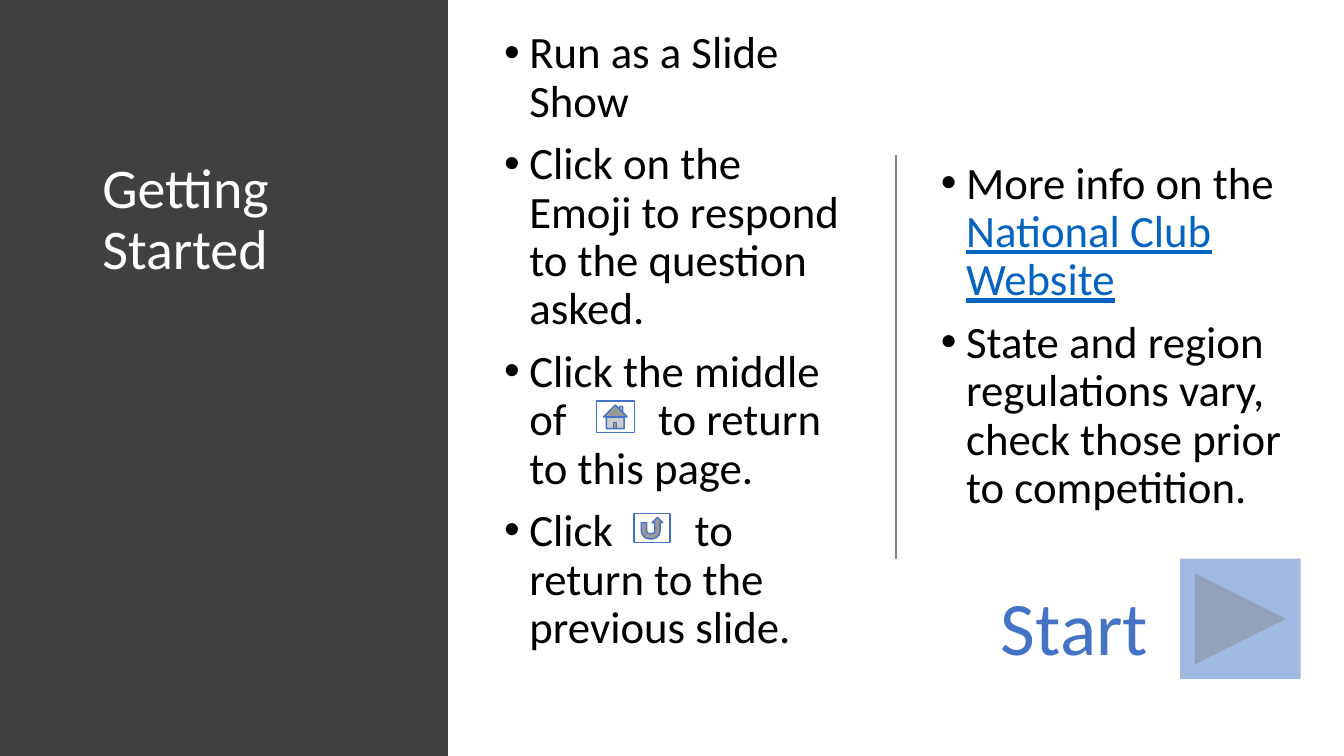
from lxml import etree
from pptx import Presentation
from pptx.dml.color import RGBColor
from pptx.enum.shapes import MSO_CONNECTOR, MSO_SHAPE
from pptx.enum.text import MSO_AUTO_SIZE, PP_ALIGN
from pptx.oxml.ns import qn
from pptx.util import Pt

RECT = MSO_SHAPE.RECTANGLE
HOME = MSO_SHAPE.ACTION_BUTTON_HOME
BACK = MSO_SHAPE.ACTION_BUTTON_RETURN
NEXT = MSO_SHAPE.ACTION_BUTTON_FORWARD_OR_NEXT
LINE = MSO_CONNECTOR.STRAIGHT
LEFT, MID = PP_ALIGN.LEFT, PP_ALIGN.CENTER
GROW = MSO_AUTO_SIZE.SHAPE_TO_FIT_TEXT
FONT = "Calibri"
HUES = {"panel": "404040", "white": "FFFFFF", "black": "000000",
        "rule": "808080", "blue": "4472C4", "link": "0563C1"}


def hue(name):
    """Return the named colour."""
    return RGBColor.from_string(HUES[name])


def add_text(slide, box, paras, size=32, color="black", align=LEFT,
             lead=0.9, bullet=False, wrap=True):
    """Add a text box; each paragraph lists runs of (text, color, line, gap)."""
    frame = slide.shapes.add_textbox(*map(Pt, box)).text_frame
    frame.word_wrap = wrap
    if not wrap:
        frame.auto_size = GROW
    for i, runs in enumerate(paras):
        para = frame.add_paragraph() if i else frame.paragraphs[0]
        para.alignment, para.line_spacing = align, lead
        para.space_before = Pt(10 if i else 0)
        if bullet:
            props = para._p.get_or_add_pPr()
            props.set("marL", str(Pt(18)))
            props.set("indent", str(-Pt(18)))
            etree.SubElement(props, qn("a:buFont")).set("typeface", "Arial")
            etree.SubElement(props, qn("a:buChar")).set("char", "•")
        for text, tint, line, gap in runs:
            run = para.add_run()
            run.text = text
            font = run.font
            font.name, font.size, font.underline = FONT, Pt(size), line
            font.color.rgb = hue(tint or color)
            if gap:
                run._r.get_or_add_rPr().set("spc", str(gap * 100))


def plain(text):
    """Return a run in the default format."""
    return text, None, False, 0


def space(gap):
    """Return one space widened by the gap."""
    return " ", None, False, gap


def add_form(slide, kind, box, fill, edge=None, alpha=None):
    """Add a filled preset shape."""
    form = slide.shapes.add_shape(kind, *map(Pt, box))
    form.shadow.inherit = False
    form.fill.solid()
    form.fill.fore_color.rgb = hue(fill)
    if edge:
        form.line.color.rgb = hue(edge)
        form.line.width = Pt(1)
    else:
        form.line.fill.background()
    if alpha:
        tint = form._element.spPr.find(f".//{qn('a:srgbClr')}")
        etree.SubElement(tint, qn("a:alpha")).set("val", str(alpha * 1000))


def add_title(slide, x, y, w, h):
    """Draw the dark panel and its title."""
    add_form(slide, RECT, (x, y, w, h), "panel")
    add_text(slide, (x + 66, y + 111, w - 92, 343),
             [[plain("Getting Started")]], size=40, color="white")


def add_steps(slide, x, y, w, h):
    """Draw the list of steps with its two small buttons."""
    add_text(slide, (x, y, w, h), [
        [plain("Run as a Slide Show")],
        [plain("Click on the Emoji to respond to the question asked.")],
        [plain("Click the middle of"), space(58), plain("to return to this page.")],
        [plain("Click"), space(51), plain("to return to the previous slide.")],
    ], bullet=True)
    add_form(slide, HOME, (x + 73, y + 268.5, 27, 22.5), "white", "blue")
    add_form(slide, BACK, (x + 100, y + 349, 25.5, 20.5), "white", "blue")


def add_more(slide, x, y, w, h):
    """Draw the divider and the notes to its right."""
    rule = slide.shapes.add_connector(LINE, *map(Pt, (x, y, x, y + 288)))
    rule.line.color.rgb = hue("rule")
    rule.line.width = Pt(1)
    etree.SubElement(rule._element.spPr, qn("a:effectLst"))
    add_text(slide, (x + 25, y, w - 25, h), [
        [plain("More info on the "),
         ("National Club Website", "link", True, 0)],
        [plain("State and region regulations vary, "
               "check those prior to competition.")],
    ], bullet=True)


def add_start(slide, x, y, w, h):
    """Draw the start label and its button."""
    add_form(slide, NEXT, (x + w - 86, y, 86, h), "blue", alpha=50)
    add_text(slide, (x, y + 11.5, 121, 73), [[plain("Start")]], size=54,
             color="blue", align=MID, lead=1.0, wrap=False)


def main():
    """Build the slide and save it."""
    deck = Presentation()
    deck.slide_width, deck.slide_height = Pt(960), Pt(540)
    slide = deck.slides.add_slide(deck.slide_layouts[6])
    add_title(slide, 0, 0, 320, 540)
    add_steps(slide, 353, 18, 262, 560)
    add_more(slide, 640, 111, 295, 382)
    add_start(slide, 707, 399, 222, 86)
    deck.save("out.pptx")


if __name__ == "__main__":
    main()
